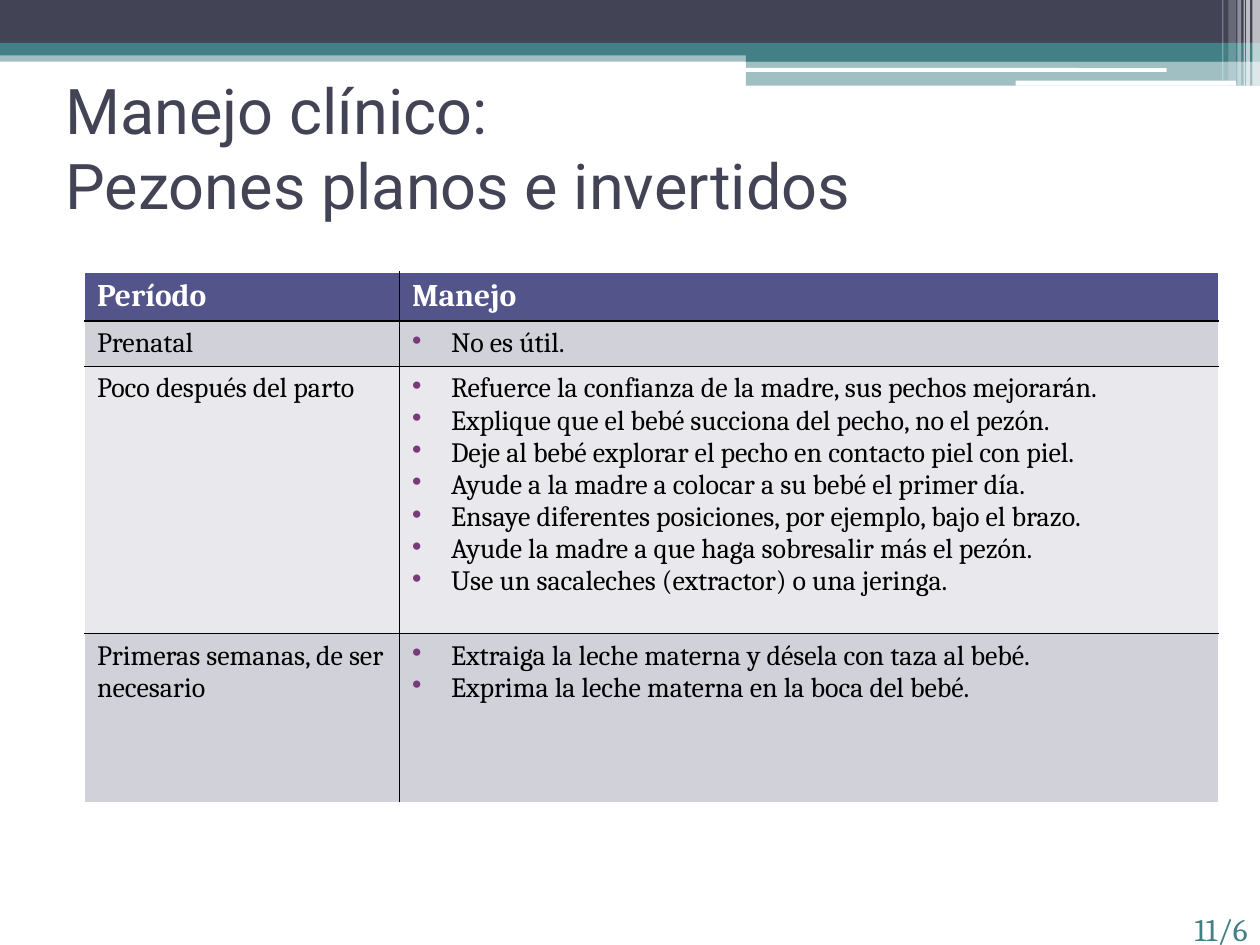
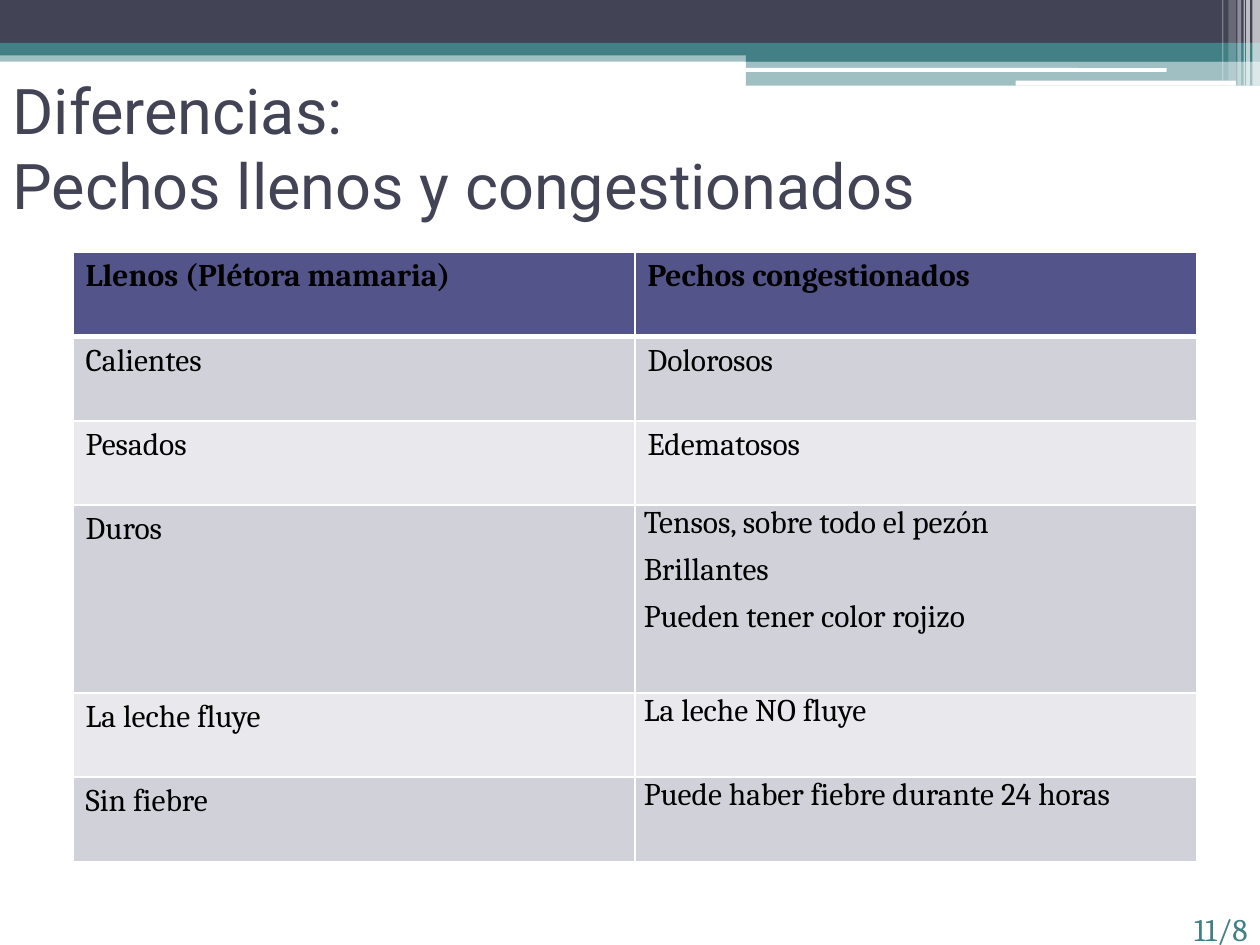
from dataclasses import dataclass
from enum import Enum
from itertools import product

from lxml import etree
from pptx import Presentation
from pptx import util as u
from pptx.dml import color
from pptx.enum import shapes, text
from pptx.oxml import ns

SLATE = color.RGBColor(0x42, 0x44, 0x56)
TEAL = color.RGBColor(0x43, 0x80, 0x86)
INDIGO = color.RGBColor(0x53, 0x54, 0x8A)
PURPLE = color.RGBColor(0x78, 0x3A, 0x7A)
ROW_DARK = color.RGBColor(0xD1, 0xD1, 0xDA)
ROW_LIGHT = color.RGBColor(0xE9, 0xE9, 0xED)
WHITE = color.RGBColor(0xFF, 0xFF, 0xFF)
BLACK = color.RGBColor(0, 0, 0)

TITLE_FONT, BODY_FONT = "Roboto", "Cambria"
SLIDE_WIDTH, SLIDE_HEIGHT = u.Inches(10), u.Inches(7.5)
GRID_COLUMNS, GRID_ROWS = 100, 75
TITLE_ONLY = 5
BULLET_INDENT = u.Inches(0.31)


def cols(count: float) -> u.Emu:
    return u.Emu(round(SLIDE_WIDTH * count / GRID_COLUMNS))


def rows(count: float) -> u.Emu:
    return u.Emu(round(SLIDE_HEIGHT * count / GRID_ROWS))


@dataclass(frozen=True)
class Area:
    left: float
    top: float
    width: float
    height: float

    def place(self) -> tuple[u.Emu, ...]:
        return cols(self.left), rows(self.top), cols(self.width), rows(self.height)


@dataclass(frozen=True)
class Band:
    area: Area
    fill: color.RGBColor
    opacity: int = 100
    rounded: bool = False


class Style(Enum):
    PLAIN = 0
    BULLETED = 1
    TIGHT = 2


@dataclass(frozen=True)
class Entry:
    lines: tuple[str, ...]
    style: Style = Style.PLAIN


@dataclass(frozen=True)
class Comparison:
    left: float
    top: float
    widths: tuple[float, ...]
    heights: tuple[float, ...]
    header_color: color.RGBColor
    body_size: int
    rule_color: color.RGBColor
    header_rule: int
    entries: tuple[tuple[Entry, ...], ...]


@dataclass(frozen=True)
class Lesson:
    title: str
    title_area: Area
    comparison: Comparison
    page: str


def stripe(left: float, width: float, height: float, opacity: int) -> Band:
    return Band(Area(left, 0, width, height), WHITE, opacity)


BANDS = (
    Band(Area(0, 4, 100, 0.9), TEAL, 50),
    Band(Area(0, 0, 100, 3.4), SLATE),
    Band(Area(0, 3.4, 100, 1), TEAL),
    Band(Area(59.2, 3.9, 40.8, 1), TEAL),
    Band(Area(59.2, 4.8, 40.8, 2), TEAL, 50),
    Band(Area(59.1, 5.4, 33.5, 0.3), WHITE, rounded=True),
    Band(Area(80.6, 6.4, 17.5, 0.4), WHITE, rounded=True),
    stripe(99.4, 0.6, 6.8, 65),
    stripe(98.9, 0.3, 6.8, 65),
    stripe(98.7, 0.1, 6.8, 60),
    stripe(98.2, 0.3, 6.8, 40),
    stripe(97.5, 0.6, 6.4, 20),
    stripe(97, 0.1, 6.4, 30),
)
PAGE_AREA = Area(85.8, 71.7, 14.2, 3.3)


def plain(*lines: str) -> Entry:
    return Entry(lines)


def bulleted(*lines: str) -> Entry:
    return Entry(lines, Style.BULLETED)


def tight(*lines: str) -> Entry:
    return Entry(lines, Style.TIGHT)


LESSONS = (
    Lesson(
        "Manejo clínico:\vPezones planos e invertidos",
        Area(4.2, 7.5, 90, 8.3),
        Comparison(
            6.7, 21.6, (25, 65), (3.8, 3.6, 21.2, 13.4), WHITE, 16, BLACK, 1,
            (
                (plain("Período"), plain("Manejo")),
                (plain("Prenatal"), bulleted("No es útil.")),
                (plain("Poco después del parto"), bulleted(
                    "Refuerce la confianza de la madre, sus pechos mejorarán.",
                    "Explique que el bebé succiona del pecho, no el pezón.",
                    "Deje al bebé explorar el pecho en contacto piel con piel.",
                    "Ayude a la madre a colocar a su bebé el primer día.",
                    "Ensaye diferentes posiciones, por ejemplo, bajo el brazo.",
                    "Ayude la madre a que haga sobresalir más el pezón.",
                    "Use un sacaleches (extractor) o una jeringa.")),
                (plain("Primeras semanas, de ser necesario"), bulleted(
                    "Extraiga la leche materna y désela con taza al bebé.",
                    "Exprima la leche materna en la boca del bebé.")),
            ),
        ),
        "11/6",
    ),
    Lesson(
        "Diferencias: \vPechos llenos y congestionados",
        Area(0, 5.8, 100, 11.7),
        Comparison(
            5.8, 20, (44.6, 44.6), (6.7, 6.7, 6.7, 14.9, 6.7, 6.7), BLACK, 18, WHITE, 3,
            (
                (plain("Llenos (Plétora mamaria)"), plain("Pechos congestionados")),
                (plain("Calientes"), plain("Dolorosos")),
                (plain("Pesados"), plain("Edematosos")),
                (plain("Duros"), tight(
                    "Tensos, sobre todo el pezón", "Brillantes", "Pueden tener color rojizo")),
                (plain("La leche fluye"), tight("La leche NO fluye")),
                (plain("Sin fiebre"), tight("Puede haber fiebre durante 24 horas")),
            ),
        ),
        "11/8",
    ),
)


def format_runs(paragraph, font: str, size: int, tint: color.RGBColor, bold: bool = False) -> None:
    for run in paragraph.runs:
        run.font.name, run.font.size, run.font.bold = font, u.Pt(size), bold
        run.font.color.rgb = tint


def add_band(slide, band: Band) -> None:
    kind = shapes.MSO_SHAPE.ROUNDED_RECTANGLE if band.rounded else shapes.MSO_SHAPE.RECTANGLE
    shape = slide.shapes.add_shape(kind, *band.area.place())
    shape.shadow.inherit = False
    shape.line.fill.background()
    shape.fill.solid()
    shape.fill.fore_color.rgb = band.fill
    if band.opacity < 100:
        tint = shape.element.spPr.find(".//" + ns.qn("a:srgbClr"))
        etree.SubElement(tint, ns.qn("a:alpha"), val=str(band.opacity * 1000))


def add_title(slide, lesson: Lesson) -> None:
    title = slide.shapes.title
    title.left, title.top, title.width, title.height = lesson.title_area.place()
    frame = title.text_frame
    frame.text = lesson.title
    frame.word_wrap = True
    frame.auto_size = text.MSO_AUTO_SIZE.NONE
    frame.vertical_anchor = text.MSO_ANCHOR.MIDDLE
    frame.paragraphs[0].alignment = text.PP_ALIGN.LEFT
    format_runs(frame.paragraphs[0], TITLE_FONT, 36, SLATE)


def add_page(slide, page: str) -> None:
    frame = slide.shapes.add_textbox(*PAGE_AREA.place()).text_frame
    frame.text = page
    frame.word_wrap = True
    frame.paragraphs[0].alignment = text.PP_ALIGN.RIGHT
    format_runs(frame.paragraphs[0], BODY_FONT, 18, TEAL)


def add_bullet(paragraph) -> None:
    properties = paragraph._p.get_or_add_pPr()
    properties.set("marL", str(BULLET_INDENT))
    properties.set("indent", str(-BULLET_INDENT))
    tint = etree.SubElement(properties, ns.qn("a:buClr"))
    etree.SubElement(tint, ns.qn("a:srgbClr"), val=str(PURPLE))
    etree.SubElement(properties, ns.qn("a:buChar"), char="•")


def add_border(cell, side: str, tint: color.RGBColor, width: int) -> None:
    properties = cell._tc.get_or_add_tcPr()
    border = etree.SubElement(properties, ns.qn(f"a:ln{side}"), w=str(u.Pt(width)))
    fill = etree.SubElement(border, ns.qn("a:solidFill"))
    etree.SubElement(fill, ns.qn("a:srgbClr"), val=str(tint))


def rule_cell(cell, row: int, column: int, comparison: Comparison) -> None:
    last_row, last_column = len(comparison.heights) - 1, len(comparison.widths) - 1
    outer = {"L": column == 0, "R": column == last_column, "T": row == 0, "B": row == last_row}
    under_header = {"B": row == 0, "T": row == 1}
    for side, is_outer in outer.items():
        add_border(cell, side, WHITE if is_outer else comparison.rule_color,
                   comparison.header_rule if under_header.get(side) else 1)


def fill_cell(cell, row: int, entry: Entry, comparison: Comparison) -> None:
    header = row == 0
    cell.fill.solid()
    cell.fill.fore_color.rgb = INDIGO if header else ROW_DARK if row % 2 else ROW_LIGHT
    cell.text_frame.text = "\n".join(entry.lines)
    if entry.style is Style.TIGHT:
        cell.margin_left = cell.margin_right = u.Inches(0.07)
        cell.margin_top = cell.margin_bottom = 0
    for paragraph in cell.text_frame.paragraphs:
        if entry.style is Style.TIGHT:
            paragraph.space_before = u.Pt(6)
        elif entry.style is Style.BULLETED:
            add_bullet(paragraph)
        format_runs(paragraph, BODY_FONT, 18 if header else comparison.body_size,
                    comparison.header_color if header else BLACK, header)


def add_comparison(slide, comparison: Comparison) -> None:
    area = Area(comparison.left, comparison.top, sum(comparison.widths), sum(comparison.heights))
    row_count, column_count = len(comparison.heights), len(comparison.widths)
    table = slide.shapes.add_table(row_count, column_count, *area.place()).table
    table.horz_banding = False
    for column, width in zip(table.columns, comparison.widths):
        column.width = cols(width)
    for table_row, height in zip(table.rows, comparison.heights):
        table_row.height = rows(height)
    for row, column in product(range(row_count), range(column_count)):
        cell = table.cell(row, column)
        rule_cell(cell, row, column, comparison)
        fill_cell(cell, row, comparison.entries[row][column], comparison)


def main() -> None:
    deck = Presentation()
    deck.slide_width, deck.slide_height = SLIDE_WIDTH, SLIDE_HEIGHT
    for lesson in LESSONS:
        slide = deck.slides.add_slide(deck.slide_layouts[TITLE_ONLY])
        for band in BANDS:
            add_band(slide, band)
        add_title(slide, lesson)
        add_comparison(slide, lesson.comparison)
        add_page(slide, lesson.page)
    deck.save("out.pptx")


if __name__ == "__main__":
    main()
